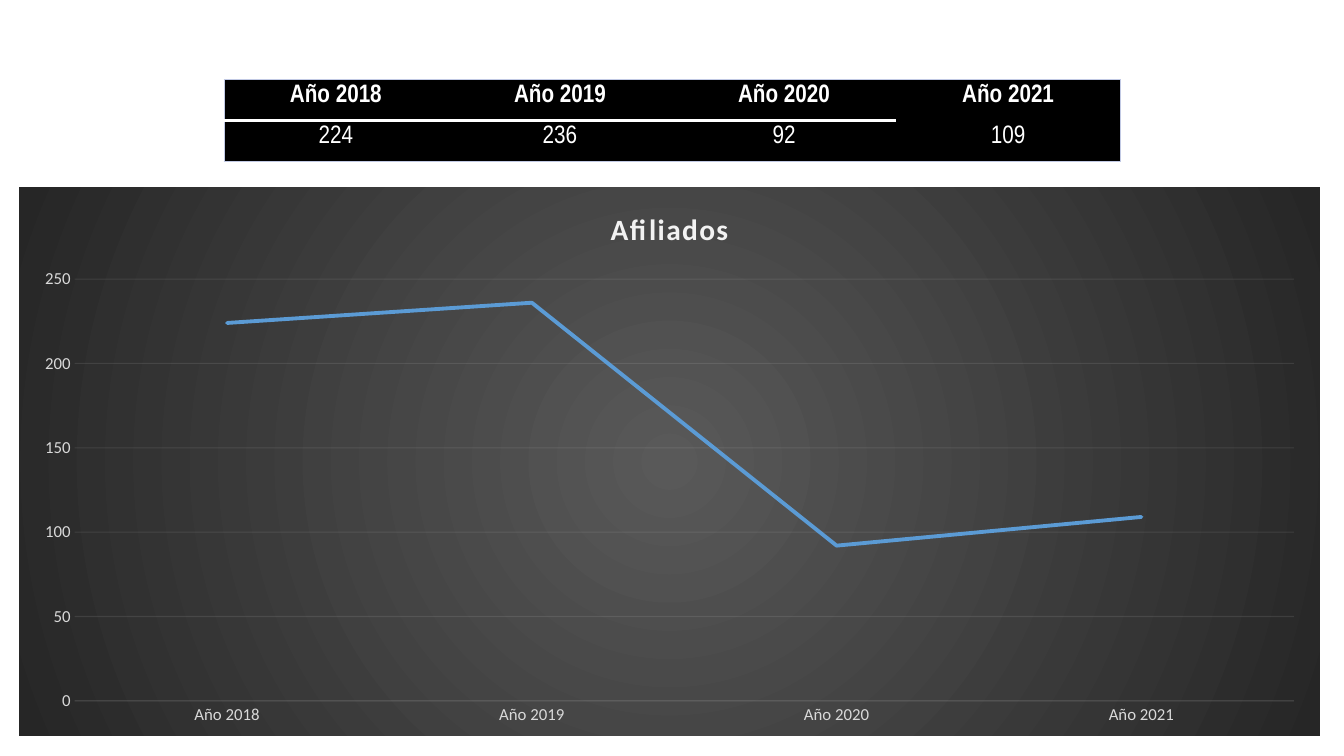
from lxml.etree import SubElement
from pptx import Presentation
from pptx.chart.data import CategoryChartData
from pptx.dml.color import RGBColor
from pptx.enum.chart import XL_CHART_TYPE, XL_TICK_MARK
from pptx.enum.text import PP_ALIGN
from pptx.oxml import parse_xml
from pptx.oxml.ns import nsdecls, qn
from pptx.util import Inches, Pt

WHITE = RGBColor(0xFF, 0xFF, 0xFF)
BLACK = RGBColor(0x00, 0x00, 0x00)
EDGE = RGBColor(0xC1, 0xC9, 0xE4)
PALE = RGBColor(0xF2, 0xF2, 0xF2)
LABEL = RGBColor(0xD9, 0xD9, 0xD9)
BLUE = RGBColor(0x5B, 0x9B, 0xD5)
CENTER_GRAY = RGBColor(0x59, 0x59, 0x59)
OUTER_GRAY = RGBColor(0x26, 0x26, 0x26)

NO_STYLE = "{2D5ABB26-0587-4C30-8999-92F81FD0307C}"
YEARS = ["Año 2018", "Año 2019", "Año 2020", "Año 2021"]
MEMBERS = [224, 236, 92, 109]


def write(tf, text, font, size, color, bold=False, spacing=None):
    p = tf.paragraphs[0]
    p.alignment = PP_ALIGN.CENTER
    r = p.add_run()
    r.text = text
    style_font(r.font, font, size, color, bold)
    if spacing:
        r.font._element.set("spc", str(spacing))


def style_font(f, name, size, color, bold=False):
    f.name, f.size, f.bold = name, Pt(size), bold
    f.color.rgb = color


def set_borders(cell, borders):
    """Apply {side: (color, points)} ahead of the cell's fill."""
    tcPr = cell._tc.get_or_add_tcPr()
    sides = [side for side in "LRTB" if side in borders]
    for i, side in enumerate(sides):
        color, width = borders[side]
        tcPr.insert(i, parse_xml(
            f'<a:ln{side} {nsdecls("a")} w="{Pt(width)}"><a:solidFill>'
            f'<a:srgbClr val="{color}"/></a:solidFill></a:ln{side}>'))


def faint_line(line):
    line.color.rgb = PALE
    line.width = Pt(0.75)
    for clr in line._ln.iter(qn("a:srgbClr")):
        SubElement(clr, qn("a:alpha")).set("val", "10000")


def add_members_table(s, x, y, w, h):
    rows = [YEARS, MEMBERS]
    last_row, last_col = len(rows) - 1, len(YEARS) - 1
    thin, rule = (EDGE, 0.5), (WHITE, 2)
    table = s.shapes.add_table(len(rows), len(YEARS), x, y, w, h).table
    table._tbl.tblPr.find(qn("a:tableStyleId")).text = NO_STYLE
    for i, values in enumerate(rows):
        for j, value in enumerate(values):
            cell = table.cell(i, j)
            cell.margin_top = cell.margin_bottom = Inches(0.05)
            cell.fill.solid()
            cell.fill.fore_color.rgb = BLACK
            write(cell.text_frame, str(value), "Arial Narrow", 18, WHITE, bold=i == 0)
            # Thin outer frame, white rule under the first three headings
            borders = {}
            if j == 0:
                borders["L"] = thin
            if j == last_col:
                borders["R"] = thin
            if i == 0:
                borders["T"] = thin
                if j < last_col:
                    borders["B"] = rule
            if i == last_row:
                borders["B"] = thin
                if j < last_col:
                    borders["T"] = rule
            set_borders(cell, borders)


def add_members_chart(s, x, y, w, h):
    data = CategoryChartData()
    data.categories = YEARS
    data.add_series("Afiliados", MEMBERS)
    chart = s.shapes.add_chart(XL_CHART_TYPE.LINE, x, y, w, h, data).chart
    chart.has_legend = False
    style_font(chart.font, "Calibri", 10, BLACK)
    chart.has_title = True
    write(chart.chart_title.text_frame, "Afiliados", "Calibri", 21, PALE,
          bold=True, spacing=100)
    chart.chart_title.include_in_layout = False

    # Radial background
    chart._chartSpace.find(qn("c:chart")).addnext(parse_xml(
        f'<c:spPr {nsdecls("c", "a")}><a:gradFill><a:gsLst>'
        f'<a:gs pos="0"><a:srgbClr val="{CENTER_GRAY}"/></a:gs>'
        f'<a:gs pos="100000"><a:srgbClr val="{OUTER_GRAY}"/></a:gs></a:gsLst>'
        '<a:path path="circle"><a:fillToRect l="50000" t="50000" r="50000" b="50000"/>'
        '</a:path></a:gradFill><a:ln><a:noFill/></a:ln></c:spPr>'))

    # Axes and gridlines
    for axis in (chart.category_axis, chart.value_axis):
        axis.major_tick_mark = axis.minor_tick_mark = XL_TICK_MARK.NONE
        style_font(axis.tick_labels.font, "Calibri", 12, LABEL)
    faint_line(chart.category_axis.format.line)
    values = chart.value_axis
    values.minimum_scale, values.maximum_scale, values.major_unit = 0, 250, 50
    values.format.line.fill.background()
    faint_line(values.major_gridlines.format.line)

    # Series line with rounded ends
    series = chart.plots[0].series[0]
    series.smooth = False
    line = series.format.line
    line.color.rgb = BLUE
    line.width = Pt(2.75)
    line._ln.set("cap", "rnd")


def main():
    prs = Presentation()
    prs.slide_width, prs.slide_height = Inches(13.33), Inches(7.5)
    s = prs.slides.add_slide(prs.slide_layouts[6])
    add_members_table(s, Inches(2.22), Inches(0.79), Inches(8.89), Inches(0.81))
    add_members_chart(s, Inches(0.19), Inches(1.86), Inches(12.9), Inches(5.44))
    prs.save("out.pptx")


if __name__ == "__main__":
    main()
